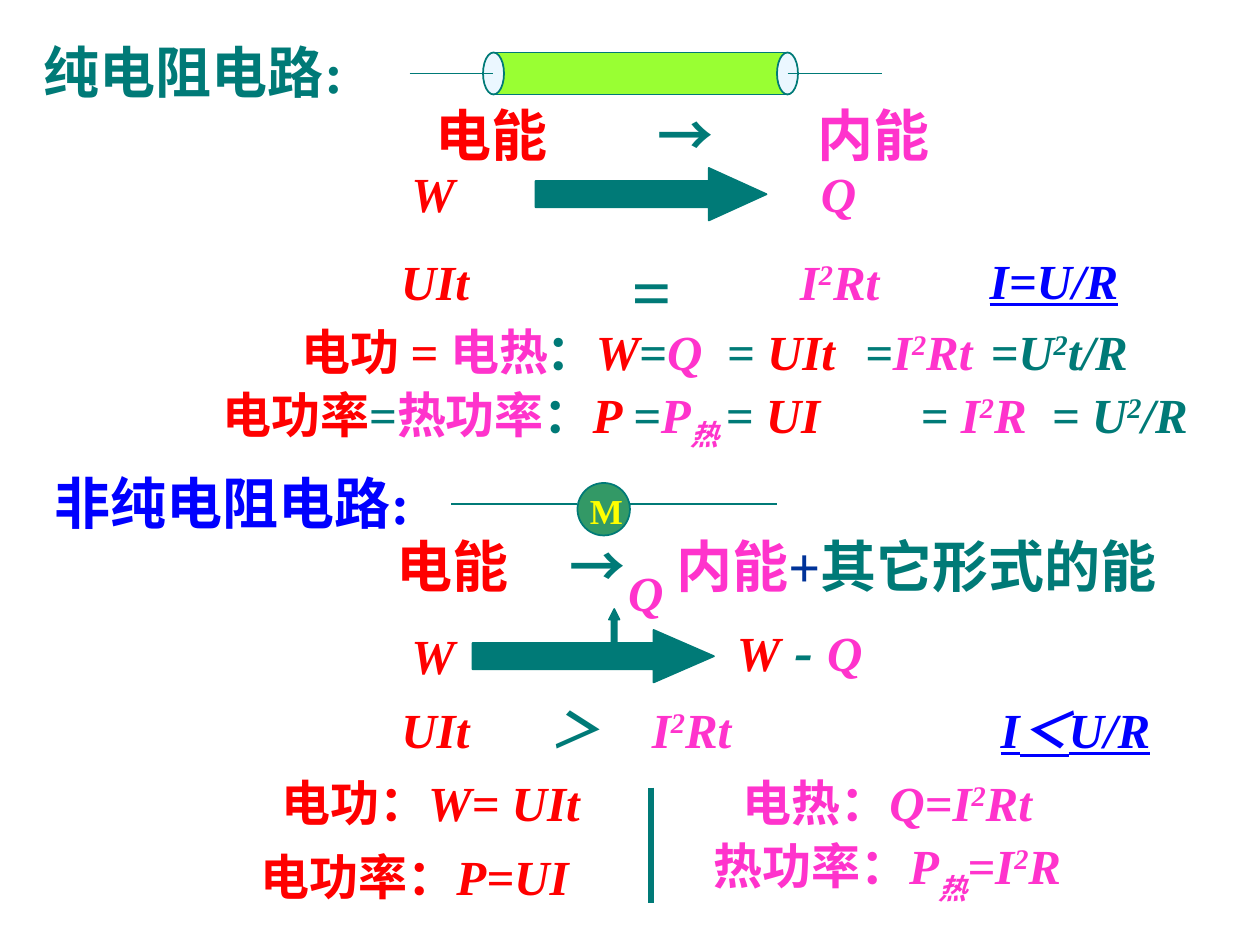
from dataclasses import dataclass
from typing import NamedTuple

from lxml.etree import SubElement
from pptx import Presentation
from pptx.dml.color import RGBColor
from pptx.enum.shapes import MSO_CONNECTOR as Connector, MSO_SHAPE as Preset
from pptx.enum.text import MSO_AUTO_SIZE as AutoSize, PP_ALIGN as Align
from pptx.oxml.ns import qn
from pptx.util import Pt

TEAL = RGBColor(0x00, 0x7A, 0x77)
RED = RGBColor(0xFF, 0x00, 0x00)
PINK = RGBColor(0xFF, 0x33, 0xCC)
BLUE = RGBColor(0x00, 0x00, 0xFF)
NAVY = RGBColor(0x00, 0x33, 0x99)
YELLOW = RGBColor(0xFF, 0xFF, 0x00)
LIME = RGBColor(0x99, 0xFF, 0x33)
ICE = RGBColor(0xEB, 0xF7, 0xFF)
GREEN = RGBColor(0x33, 0x99, 0x66)
FONT = "Times New Roman"
HEADING, FORMULA = 32, 28
PARAGRAPH_GAP = 16.5
LEFT, CENTER = Align.LEFT, Align.CENTER


class Span(NamedTuple):
    text: str
    color: RGBColor
    italic: bool = True
    baseline: int = 0
    size: float | None = None


@dataclass
class Label:
    left: float
    top: float
    width: float
    lines: list[list[Span]]
    align: Align = CENTER
    size: float = FORMULA
    height: float = 41
    wrap: bool = True
    underline: bool = False
    margin_left: float = 7.2
    first_indent: float = 0
    tabs: tuple[float, ...] = ()


class Figure(NamedTuple):
    preset: Preset
    left: float
    top: float
    width: float
    height: float
    fill: RGBColor
    adjustments: tuple[float, ...] = ()


class Line(NamedTuple):
    x1: float
    y1: float
    x2: float
    y2: float
    width: float = 1


def upright(text: str, color: RGBColor) -> Span:
    return Span(text, color, italic=False)


def squared(base: str, rest: str, color: RGBColor) -> list[Span]:
    """Spans for base, a raised 2, and what follows it."""
    return [Span(base, color), Span("2", color, baseline=30), Span(rest, color)]


JOULE_HEAT = squared("I", "Rt", PINK)

FIGURES = [
    Figure(Preset.RECTANGLE, 282, 30, 168, 24, LIME),
    Figure(Preset.OVAL, 276, 30, 12, 24, ICE),
    Figure(Preset.OVAL, 444, 30, 12, 24, ICE),
    Figure(Preset.RIGHT_ARROW, 306, 96, 132, 30, TEAL, (0.5, 1.1)),
    Figure(Preset.OVAL, 330, 276, 30, 30, GREEN),
    Figure(Preset.RIGHT_ARROW, 270, 360, 138, 30, TEAL, (0.5, 1.15)),
    Figure(Preset.UP_ARROW, 348, 348, 6, 24, TEAL, (0.5, 1)),
]

LINES = [
    Line(234, 42, 282, 42),
    Line(450, 42, 504, 42),
    Line(258, 288, 330, 288),
    Line(360, 288, 444, 288),
    Line(372, 450, 372, 516, 3),
]

PURE_RESISTANCE = [
    Label(18, 18, 181.5, [[upright("纯电阻电路:", TEAL)]], LEFT, HEADING, 45),
    Label(210, 54, 360, [[upright("电能\t", RED), upright("→\t", TEAL), upright("内能", PINK)]],
          LEFT, HEADING, 45, margin_left=39, tabs=(127, 218)),
    Label(450, 90, 72, [[Span("Q", PINK)], JOULE_HEAT], LEFT, height=91.5, first_indent=12),
    Label(222, 90, 67, [[Span("W", RED)], [Span("UIt", RED)]], LEFT, height=91.5, first_indent=6),
    Label(354, 138, 37.5, [[Span("=", TEAL)]], LEFT, 40, 55.5, wrap=False),
    Label(558.5, 139.5, 88, [[Span("I=U/R", BLUE)]], LEFT, wrap=False, underline=True),
    Label(156, 180, 174, [[upright("电功 = ", RED), upright("电热", PINK)]]),
    Label(300, 180, 114, [[upright("：", TEAL), Span("W", RED), upright("=", TEAL), Span("Q", PINK)]]),
    Label(408, 180, 76.5, [[Span("= ", TEAL), Span("UIt", RED)]], wrap=False),
    Label(480, 180, 90, [[Span("=", TEAL), *JOULE_HEAT]]),
    Label(558, 180, 94.5, [squared("=U", "t/R", TEAL)], wrap=False),
    Label(120, 216, 600, [[
        upright("电功率", RED), upright("=", TEAL), upright("热功率", PINK), upright("：", TEAL),
        Span("P ", RED), Span("=", TEAL), Span("P", PINK), Span("热 ", PINK, baseline=-25),
        Span("= ", TEAL), Span("UI\t", RED), Span("= ", TEAL), *squared("I", "R\t", PINK),
        *squared("= U", "/R", TEAL)]], LEFT, tabs=(399, 474)),
]

OTHER_CIRCUIT = [
    Label(24, 264, 216, [[upright("非纯电阻电路:", BLUE)]], LEFT, HEADING, 45),
    Label(180, 300, 540, [[
        upright("电能\t", RED), upright("→\t", TEAL), upright("内能", PINK), upright("+", NAVY),
        upright("其它形式的能", TEAL)]], LEFT, HEADING, 45, margin_left=46.5, tabs=(99, 160)),
    Label(330, 276, 36, [[upright("M", YELLOW)]], LEFT, 20, 31),
    Label(228, 354, 39.5, [[Span("W", RED)]], LEFT, wrap=False),
    Label(414, 348, 96, [[Span("W", RED), Span(" ", RED, size=HEADING),
                          Span("- ", TEAL, size=HEADING), Span("Q", PINK)]], LEFT, height=45),
    Label(348, 318, 42, [[Span("Q", PINK)]]),
    Label(222, 396, 53.5, [[Span("UIt", RED)]], wrap=False),
    Label(264, 396, 204, [[Span("＞\t", TEAL), *JOULE_HEAT]], LEFT, margin_left=50, tabs=(58.5,)),
    Label(546, 396, 137, [[Span("I＜U/R", BLUE)]], underline=True),
    Label(144, 438, 204, [[upright("电功：", RED), Span("W= UIt", RED)]]),
    Label(372, 438, 270, [[upright("电热：", PINK), *squared("Q=I", "Rt", PINK)]]),
    Label(126, 480, 222, [[upright("电功率：", RED), Span("P=UI", RED)]]),
    Label(378, 474, 258, [[upright("热功率：", PINK), Span("P", PINK),
                           Span("热", PINK, baseline=-30), *squared("=I", "R", PINK)]]),
]


def add_figure(slide, figure: Figure) -> None:
    shape = slide.shapes.add_shape(figure.preset, *map(Pt, figure[1:5]))
    shape.shadow.inherit = False
    for index, value in enumerate(figure.adjustments):
        shape.adjustments[index] = value
    shape.fill.solid()
    shape.fill.fore_color.rgb = figure.fill
    shape.line.color.rgb = TEAL
    shape.line.width = Pt(1)


def add_line(slide, line: Line) -> None:
    connector = slide.shapes.add_connector(Connector.STRAIGHT, *map(Pt, line[:4]))
    connector.line.color.rgb = TEAL
    connector.line.width = Pt(line.width)
    SubElement(connector._element.spPr, qn("a:effectLst"))


def add_span(paragraph, span: Span, label: Label) -> None:
    run = paragraph.add_run()
    run.text = span.text
    formats = {"name": FONT, "size": Pt(span.size or label.size), "bold": True,
               "italic": span.italic, "underline": label.underline}
    for name, value in formats.items():
        setattr(run.font, name, value)
    run.font.color.rgb = span.color
    if span.baseline:
        run._r.get_or_add_rPr().set("baseline", str(span.baseline * 1000))


def add_label(slide, label: Label) -> None:
    box = slide.shapes.add_textbox(*map(Pt, (label.left, label.top, label.width, label.height)))
    frame = box.text_frame
    formats = {"word_wrap": label.wrap, "auto_size": AutoSize.SHAPE_TO_FIT_TEXT,
               "margin_left": Pt(label.margin_left)}
    for name, value in formats.items():
        setattr(frame, name, value)
    for index, spans in enumerate(label.lines):
        paragraph = frame.add_paragraph() if index else frame.paragraphs[0]
        paragraph.alignment = label.align
        properties = paragraph._p.get_or_add_pPr()
        if index:
            paragraph.space_before = Pt(PARAGRAPH_GAP)
        elif label.first_indent:
            properties.set("marL", str(Pt(label.first_indent)))
        if label.tabs:
            tab_list = SubElement(properties, qn("a:tabLst"))
            for position in label.tabs:
                SubElement(tab_list, qn("a:tab"), pos=str(Pt(position)), algn="l")
        for span in spans:
            add_span(paragraph, span, label)


def main() -> None:
    presentation = Presentation()
    presentation.slide_width, presentation.slide_height = Pt(720), Pt(540)
    slide = presentation.slides.add_slide(presentation.slide_layouts[6])
    for figure in FIGURES:
        add_figure(slide, figure)
    for line in LINES:
        add_line(slide, line)
    for label in PURE_RESISTANCE + OTHER_CIRCUIT:
        add_label(slide, label)
    presentation.save("out.pptx")


if __name__ == "__main__":
    main()
